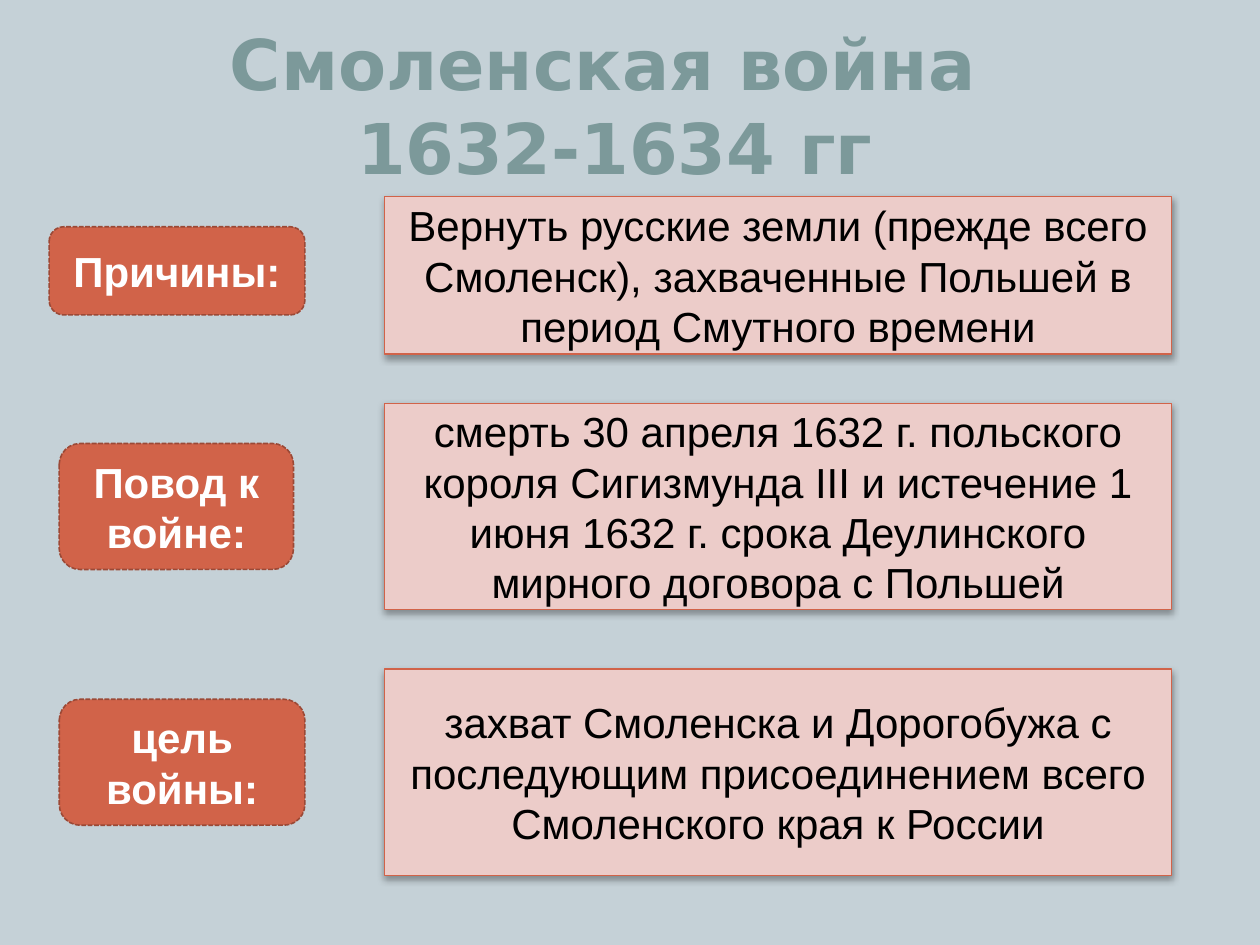
import dataclasses

import lxml.etree
import pptx
import pptx.dml.color
import pptx.enum.dml
import pptx.enum.shapes
import pptx.enum.text
import pptx.oxml.ns
import pptx.presentation
import pptx.shapes.autoshape
import pptx.slide
import pptx.text.text
import pptx.util

Inches = pptx.util.Inches
Pt = pptx.util.Pt
Color = pptx.dml.color.RGBColor
Shapes = pptx.enum.shapes.MSO_SHAPE
Anchor = pptx.enum.text.MSO_ANCHOR


@dataclasses.dataclass(frozen=True)
class Theme:
    background: Color = Color.from_string("C5D1D7")
    title: Color = Color.from_string("7C999A")
    accent: Color = Color.from_string("D16349")
    label_line: Color = Color.from_string("9B4936")
    label_text: Color = Color.from_string("FFFFFF")
    panel: Color = Color.from_string("ECCCC9")
    panel_text: Color = Color.from_string("000000")
    title_font: str = "DejaVu Sans"
    body_font: str = "Arial"
    title_size: float = 40
    body_size: float = 24


@dataclasses.dataclass(frozen=True)
class Box:
    left: float
    top: float
    width: float
    height: float


@dataclasses.dataclass(frozen=True)
class Topic:
    label: str
    label_box: Box
    description: str
    panel_top: float
    panel_height: float


THEME = Theme()
PANEL_LEFT = 3.05
PANEL_WIDTH = 6.25

TOPICS = [
    Topic("Причины:", Box(0.39, 1.8, 2.03, 0.7),
          "Вернуть русские земли (прежде всего Смоленск), захваченные "
          "Польшей в период Смутного времени", 1.56, 1.25),
    Topic("Повод к войне:", Box(0.47, 3.52, 1.86, 1),
          "смерть 30 апреля 1632 г. польского короля Сигизмунда III и "
          "истечение 1 июня 1632 г. срока Деулинского мирного договора "
          "с Польшей", 3.2, 1.64),
    Topic("цель войны:", Box(0.47, 5.55, 1.95, 1),
          "захват Смоленска и Дорогобужа с последующим присоединением "
          "всего Смоленского края к России", 5.31, 1.64),
]


def write_text(frame: pptx.text.text.TextFrame, text: str, font_name: str,
               size: float, color: Color, bold: bool, anchor: Anchor) -> None:
    frame.word_wrap = True
    frame.auto_size = pptx.enum.text.MSO_AUTO_SIZE.NONE
    frame.vertical_anchor = anchor
    paragraph = frame.paragraphs[0]
    paragraph.text = text
    paragraph.alignment = pptx.enum.text.PP_ALIGN.CENTER
    paragraph.font.name = font_name
    paragraph.font.size = Pt(size)
    paragraph.font.bold = bold
    paragraph.font.color.rgb = color


def add_box(slide: pptx.slide.Slide, kind: Shapes, box: Box, text: str,
            fill: Color, line: Color, line_width: float, text_color: Color,
            bold: bool) -> pptx.shapes.autoshape.Shape:
    shape = slide.shapes.add_shape(
        kind, Inches(box.left), Inches(box.top),
        Inches(box.width), Inches(box.height))
    shape.shadow.inherit = False
    shape.fill.solid()
    shape.fill.fore_color.rgb = fill
    shape.line.color.rgb = line
    shape.line.width = Pt(line_width)
    write_text(shape.text_frame, text, THEME.body_font, THEME.body_size,
               text_color, bold, Anchor.MIDDLE)
    return shape


def add_drop_shadow(shape: pptx.shapes.autoshape.Shape) -> None:
    """Cast a soft black shadow straight down; the effect list must exist."""
    qualified = pptx.oxml.ns.qn
    effects = shape.element.spPr.find(qualified("a:effectLst"))
    shadow = lxml.etree.SubElement(
        effects, qualified("a:outerShdw"), blurRad=str(Pt(4)),
        dist=str(Pt(2)), dir=str(90 * 60000), rotWithShape="0")
    color = lxml.etree.SubElement(shadow, qualified("a:srgbClr"), val="000000")
    lxml.etree.SubElement(color, qualified("a:alpha"), val="35000")


def add_topic(slide: pptx.slide.Slide, topic: Topic) -> None:
    label = add_box(slide, Shapes.ROUNDED_RECTANGLE, topic.label_box,
                    topic.label, THEME.accent, THEME.label_line, 0.9,
                    THEME.label_text, True)
    label.line.dash_style = pptx.enum.dml.MSO_LINE.SQUARE_DOT
    panel_box = Box(PANEL_LEFT, topic.panel_top, PANEL_WIDTH, topic.panel_height)
    panel = add_box(slide, Shapes.RECTANGLE, panel_box, topic.description,
                    THEME.panel, THEME.accent, 0.75, THEME.panel_text, False)
    add_drop_shadow(panel)


def set_title(slide: pptx.slide.Slide, text: str) -> None:
    title = slide.shapes.title
    title.left, title.top = Inches(0.31), Inches(0.3)
    title.width, title.height = Inches(9.14), Inches(1.25)
    write_text(title.text_frame, text, THEME.title_font, THEME.title_size,
               THEME.title, True, Anchor.BOTTOM)


def main() -> None:
    presentation = pptx.Presentation()
    presentation.slide_width = Inches(10)
    presentation.slide_height = Inches(7.5)
    slide = presentation.slides.add_slide(
        presentation.slide_layouts.get_by_name("Title Only"))
    slide.background.fill.solid()
    slide.background.fill.fore_color.rgb = THEME.background
    set_title(slide, "Смоленская война \v1632-1634 гг")
    for topic in TOPICS:
        add_topic(slide, topic)
    presentation.save("out.pptx")


if __name__ == "__main__":
    main()
